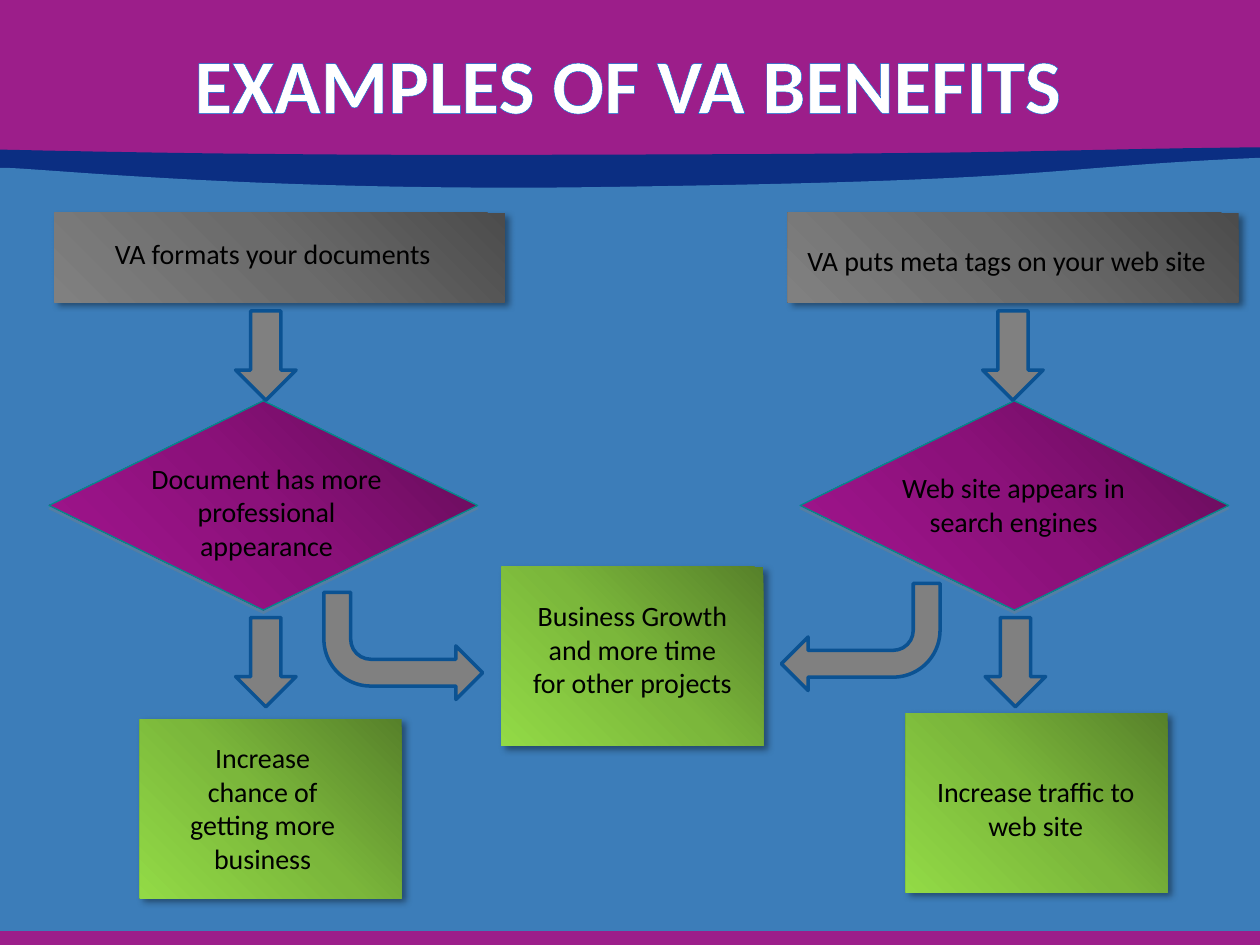
import pptx
import pptx.util
import pptx.dml.color
import pptx.enum.shapes
import pptx.enum.text
import pptx.oxml.ns
from lxml import etree

Cm, Pt = pptx.util.Cm, pptx.util.Pt
RGB = pptx.dml.color.RGBColor.from_string
KIND = pptx.enum.shapes.MSO_SHAPE
qn = pptx.oxml.ns.qn

HUES = {
    "plum": "9C1E8A", "navy": "0B2E82", "sky": "3C7DB9", "white": "FFFFFF",
    "black": "000000", "glow": "0070D5", "grey": "808080", "edge": "0B5292",
    "teal": "008C8B",
}
# Dark, middle and light stop of each gradient
FADES = {
    "green": ("57812A", "7BB73B", "92DA46"),
    "purple": ("620C56", "8B117A", "A51591"),
    "steel": ("4C4C4C", "6B6B6B", "808080"),
}

deck = pptx.Presentation()
deck.slide_width, deck.slide_height = Cm(25.4), Cm(19.05)
slide = deck.slides.add_slide(deck.slide_layouts[6])
shapes = slide.shapes


def draw(kind, box, fill, line=None, width=1, shade=None):
    """Add a preset shape; shade is (hue, alpha %, blur pt, distance pt, angle)."""
    shape = shapes.add_shape(kind, *map(Cm, box))
    shape.shadow.inherit = False
    if line:
        shape.line.color.rgb = RGB(HUES[line])
        shape.line.width = Pt(width)
    else:
        shape.line.fill.background()
    props = shape._element.spPr
    if fill in FADES:
        grad = etree.Element(qn("a:gradFill"), rotWithShape="1")
        stops = etree.SubElement(grad, qn("a:gsLst"))
        for pos, hue in zip((0, 50000, 100000), FADES[fill]):
            stop = etree.SubElement(stops, qn("a:gs"), pos=str(pos))
            etree.SubElement(stop, qn("a:srgbClr"), val=hue)
        etree.SubElement(grad, qn("a:lin"), ang=str(135 * 60000), scaled="0")
        props.find(qn("a:prstGeom")).addnext(grad)
    else:
        shape.fill.solid()
        shape.fill.fore_color.rgb = RGB(HUES[fill])
    if shade:
        hue, alpha, blur, dist, angle = shade
        cast = etree.SubElement(
            props.find(qn("a:effectLst")), qn("a:outerShdw"),
            blurRad=str(Pt(blur)), dist=str(Pt(dist)),
            dir=str(angle * 60000), algn="ctr", rotWithShape="0")
        tint = etree.SubElement(cast, qn("a:srgbClr"), val=HUES[hue])
        etree.SubElement(tint, qn("a:alpha"), val=str(alpha * 1000))
    return shape


def write(text, box, size=16, hue="black"):
    """Add a centred, wrapping text box and return its frame and run."""
    frame = shapes.add_textbox(*map(Cm, box)).text_frame
    frame.word_wrap = True
    para = frame.paragraphs[0]
    para.alignment = pptx.enum.text.PP_ALIGN.CENTER
    run = para.add_run()
    run.text = text
    run.font.name, run.font.size = "Calibri", Pt(size)
    run.font.color.rgb = RGB(HUES[hue])
    return frame, run


# Backdrop: title band, two waves made of Bezier curves, foot band
draw(KIND.RECTANGLE, (-0.08, 0, 25.5, 4.45), "plum")
waves = [
    ("navy", 7.42, [(-0.08, 3.02), (-0.08, 3), (4.09, 3.15), (11.38, 3.12),
                    (21.64, 3.1), (20.73, 3.02), (25.4, 2.97)]),
    ("sky", 19.05, [(-0.08, 3.4), (-0.08, 3.28), (4.09, 3.84), (11.4, 3.78),
                    (21.67, 3.66), (20.75, 3.38), (25.43, 3.18)]),
]
STEPS = 24
for hue, base, knots in waves:
    dots = []
    for first in (0, 3):
        curve = knots[first:first + 4]
        for step in range(1, STEPS + 1):
            t = step / STEPS
            mix = ((1 - t) ** 3, 3 * t * (1 - t) ** 2, 3 * t * t * (1 - t), t ** 3)
            dots.append([Cm(sum(m * p[axis] for m, p in zip(mix, curve)))
                         for axis in (0, 1)])
    left, right = knots[0][0], knots[-1][0]
    dots += [(Cm(right), Cm(base)), (Cm(left), Cm(base))]
    pen = shapes.build_freeform(Cm(left), Cm(knots[0][1]), scale=1.0)
    pen.add_line_segments(dots, close=True)
    wave = pen.convert_to_shape()
    wave.shadow.inherit = False
    wave.fill.solid()
    wave.fill.fore_color.rgb = RGB(HUES[hue])
    wave.line.fill.background()
draw(KIND.RECTANGLE, (-0.08, 18.77, 25.5, 0.43), "plum")

# Title
frame, run = write("EXAMPLES OF VA BENEFITS", (1.24, 0.08, 22.86, 3.18), 44, "white")
frame.vertical_anchor = pptx.enum.text.MSO_ANCHOR.MIDDLE
run.font.bold = True
rim = etree.Element(qn("a:ln"), w=str(Pt(1)))
ink = etree.SubElement(rim, qn("a:solidFill"))
etree.SubElement(ink, qn("a:srgbClr"), val=HUES["glow"])
run.font._element.insert(0, rim)

# Flow boxes
soft = ("black", 40, 4, 3, 45)
for x, y in [(2.82, 14.5), (10.11, 11.43), (18.26, 14.38)]:
    draw(KIND.RECTANGLE, (x, y, 5.28, 3.61), "green", shade=soft)
for x in (0.99, 16.13):
    draw(KIND.DIAMOND, (x, 8.08, 8.64, 4.22), "purple", "teal", 0.75,
         ("grey", 35, 0, 1.8, 90))
for x in (1.09, 15.88):
    draw(KIND.RECTANGLE, (x, 4.29, 9.09, 1.8), "steel", shade=soft)

# Labels
labels = [
    ("VA formats your documents", (1.65, 4.65, 7.7, 0.94)),
    ("Document has more professional appearance", (2.62, 9.17, 5.51, 2.31)),
    ("Increase chance of getting more business", (3.3, 14.81, 3.99, 3)),
    ("VA puts meta tags on your web site", (15.95, 4.78, 8.69, 0.94)),
    ("Web site appears in search engines", (17.68, 9.37, 5.51, 1.63)),
    ("Increase traffic to web site", (18.57, 15.49, 4.62, 1.63)),
    ("Business Growth and more time for other projects", (10.44, 11.94, 4.62, 2.31)),
]
for text, box in labels:
    write(text, box)

# Arrows
for x, y, flip in [(6.53, 11.94, "1"), (15.75, 11.76, "0")]:
    bend = draw(KIND.BENT_ARROW, (x, y, 3.2, 2.16), "grey", "edge", 2)
    bend.rotation = 180
    bend._element.spPr.find(qn("a:xfrm")).set("flipH", flip)
for x, y in [(4.75, 6.27), (19.81, 6.27), (4.75, 12.45), (19.86, 12.45)]:
    draw(KIND.DOWN_ARROW, (x, y, 1.22, 1.8), "grey", "edge", 2)

deck.save("out.pptx")
